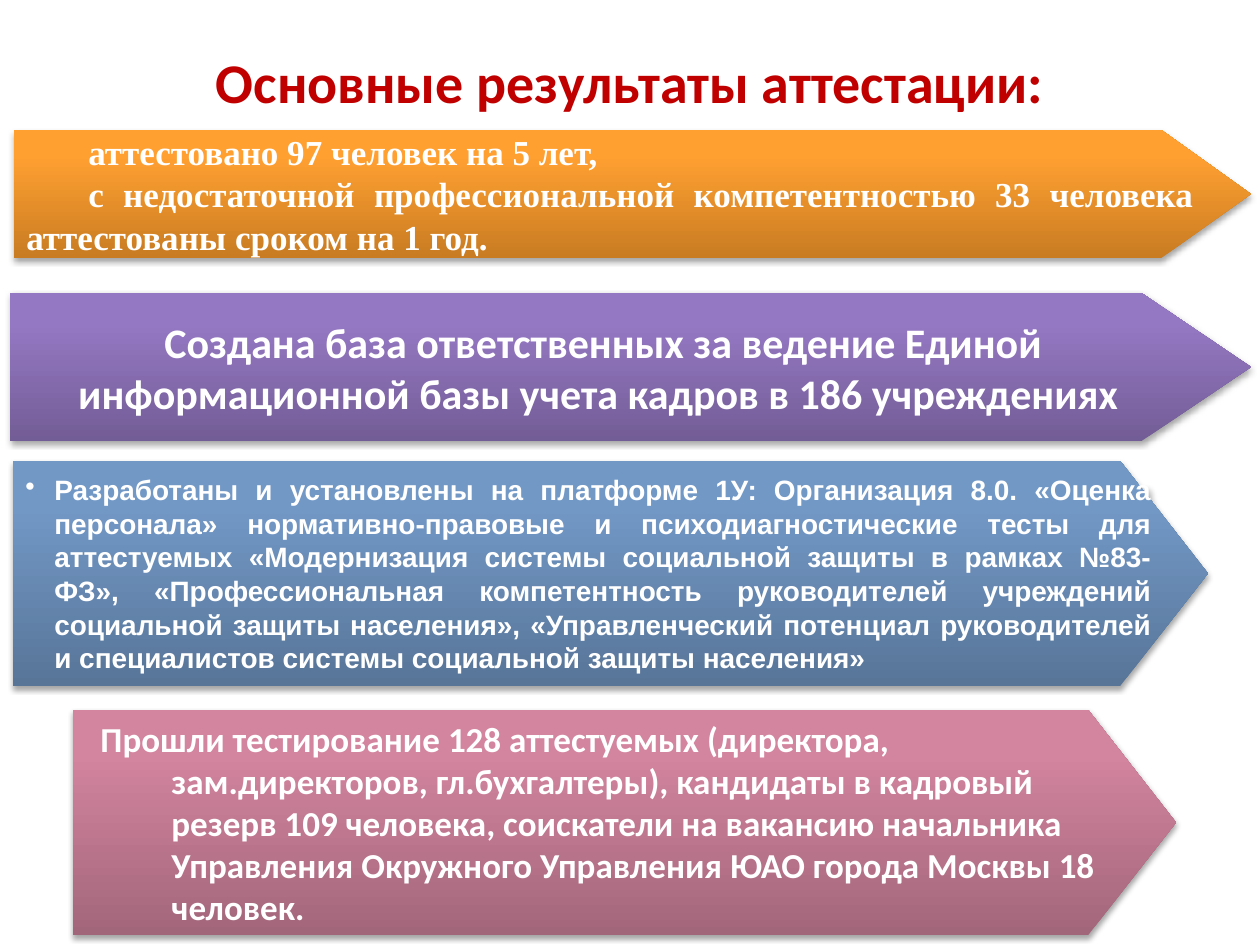
from copy import deepcopy

from lxml import etree
from pptx import Presentation, util as u
from pptx.dml.color import RGBColor
from pptx.enum import shapes, text
from pptx.oxml.ns import qn

WHITE = RGBColor(0xFF, 0xFF, 0xFF)
RED = RGBColor(0xC0, 0x00, 0x00)
ORANGE = [RGBColor(0xC9, 0x7C, 0x22), RGBColor(0xFF, 0xA0, 0x31), RGBColor(0xFF, 0xA1, 0x33)]
PURPLE = [RGBColor(0x73, 0x5D, 0x96), RGBColor(0x95, 0x78, 0xC3), RGBColor(0x96, 0x77, 0xC5)]
BLUE = [RGBColor(0x58, 0x75, 0x98), RGBColor(0x72, 0x98, 0xC6), RGBColor(0x71, 0x99, 0xC8)]
PINK = [RGBColor(0xA2, 0x66, 0x7A), RGBColor(0xD3, 0x84, 0x9F), RGBColor(0xD5, 0x84, 0x9F)]
STOP_POSITIONS = (0, 0.8, 1)

LEFT, CENTER, JUSTIFY = text.PP_ALIGN.LEFT, text.PP_ALIGN.CENTER, text.PP_ALIGN.JUSTIFY

TITLE = "Основные результаты аттестации:"

# box and indents (left margin, first line) are in px
RESULTS = [
    dict(box=(14, 130, 1237, 128), point=0.7, shades=ORANGE, font="Times New Roman",
         size=20, align=JUSTIFY, indent=(0, 62), bullet=None,
         lines=["аттестовано 97 человек на 5 лет, ",
                "с недостаточной профессиональной компетентностью 33 человека "
                "аттестованы сроком на 1 год."]),
    dict(box=(10, 293, 1241, 148), point=0.74, shades=PURPLE, font="Calibri",
         size=24, align=CENTER, indent=(0, 0), bullet=None,
         lines=["Создана база ответственных за ведение Единой информационной базы "
                "учета кадров в 186 учреждениях "]),
    dict(box=(13, 461, 1195, 225), point=0.39, shades=BLUE, font="Arial",
         size=16, align=JUSTIFY, indent=(29, -29), bullet="•",
         lines=["Разработаны и установлены на платформе 1У: Организация 8.0. «Оценка "
                "персонала» нормативно-правовые и психодиагностические тесты для "
                "аттестуемых «Модернизация системы социальной защиты в рамках №83-ФЗ», "
                "«Профессиональная компетентность руководителей учреждений социальной "
                "защиты населения», «Управленческий потенциал руководителей и "
                "специалистов системы социальной защиты населения»"]),
    dict(box=(73, 710, 1103, 225), point=0.39, shades=PINK, font="Calibri",
         size=20, align=LEFT, indent=(86, -71), bullet=None,
         lines=["Прошли тестирование 128 аттестуемых (директора, зам.директоров, "
                "гл.бухгалтеры), кандидаты в кадровый резерв 109 человека, соискатели "
                "на вакансию начальника Управления Окружного Управления ЮАО города "
                "Москвы 18 человек."]),
]


def px(n):
    return u.Inches(n / 126)


def set_font(paragraph, name, size, color):
    font = paragraph.font
    font.name, font.size, font.bold = name, u.Pt(size), True
    font.color.rgb = color


def shade(arrow, colors):
    """Three-stop gradient running from the bottom edge up."""
    arrow.fill.gradient()
    arrow.fill.gradient_angle = 90
    stop_list = arrow._element.spPr.find(".//" + qn("a:gsLst"))
    stop_list.append(deepcopy(stop_list[0]))
    for stop, position, color in zip(arrow.fill.gradient_stops, STOP_POSITIONS, colors):
        stop.position = position
        stop.color.rgb = color


def drop_shadow(arrow):
    arrow.shadow.inherit = False
    effects = arrow._element.spPr.find(qn("a:effectLst"))
    shadow = etree.SubElement(effects, qn("a:outerShdw"), blurRad="40000", dist="23000",
                              dir="5400000", rotWithShape="0")
    black = etree.SubElement(shadow, qn("a:srgbClr"), val="000000")
    etree.SubElement(black, qn("a:alpha"), val="35000")


def add_result(slide, result):
    arrow = slide.shapes.add_shape(shapes.MSO_SHAPE.PENTAGON, *map(px, result["box"]))
    arrow.adjustments[0] = result["point"]
    shade(arrow, result["shades"])
    arrow.line.fill.background()
    drop_shadow(arrow)

    frame = arrow.text_frame
    frame.word_wrap = True
    frame.vertical_anchor = text.MSO_ANCHOR.MIDDLE
    margin, first_line = result["indent"]
    for i, line in enumerate(result["lines"]):
        paragraph = frame.add_paragraph() if i else frame.paragraphs[0]
        paragraph.text = line
        paragraph.alignment = result["align"]
        properties = paragraph._p.get_or_add_pPr()
        properties.set("marL", str(px(margin)))
        properties.set("indent", str(px(first_line)))
        if result["bullet"]:
            etree.SubElement(properties, qn("a:buChar"), char=result["bullet"])
        set_font(paragraph, result["font"], result["size"], WHITE)


def main():
    deck = Presentation()
    deck.slide_width, deck.slide_height = px(1260), px(945)
    slide = deck.slides.add_slide(deck.slide_layouts[6])

    # Heading
    heading = slide.shapes.add_textbox(px(63), px(38), px(1134), px(87)).text_frame
    heading.word_wrap = True
    heading.vertical_anchor = text.MSO_ANCHOR.MIDDLE
    heading.text = TITLE
    heading.paragraphs[0].alignment = CENTER
    set_font(heading.paragraphs[0], "Calibri", 32, RED)

    # Result arrows
    for result in RESULTS:
        add_result(slide, result)

    deck.save("out.pptx")


if __name__ == "__main__":
    main()
